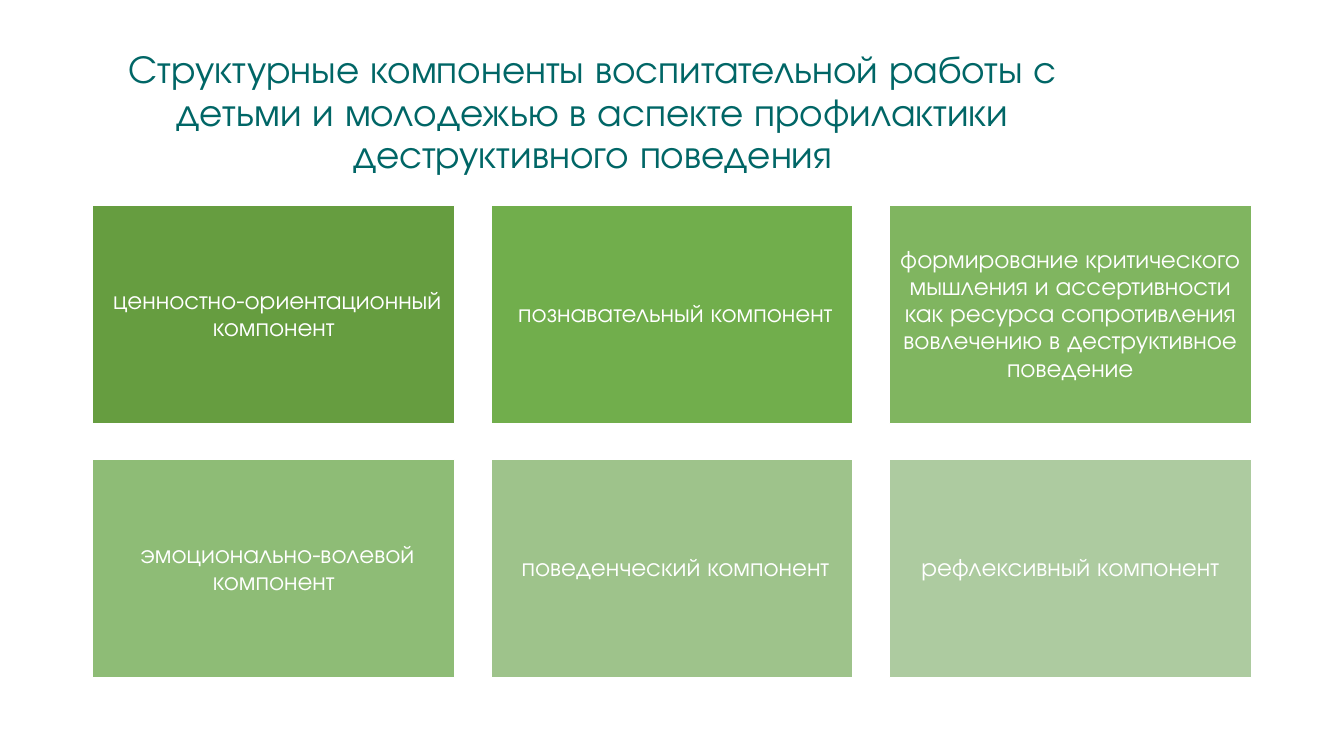
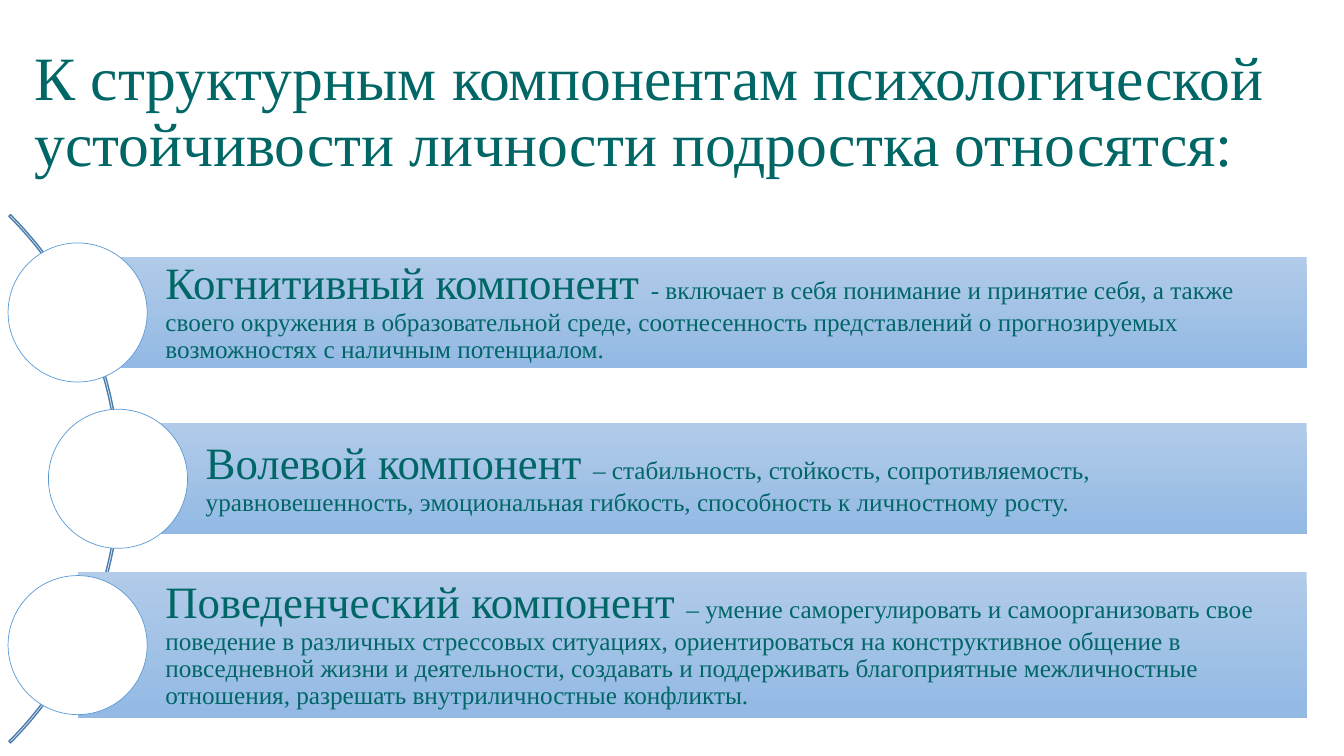
from pptx import Presentation
from pptx.dml.color import RGBColor
from pptx.enum.shapes import MSO_SHAPE
from pptx.enum.text import MSO_ANCHOR, MSO_AUTO_SIZE, PP_ALIGN
from pptx.util import Inches, Pt

TEAL, WHITE, BLUE, ARC_BLUE = "006666", "FFFFFF", "5B9BD5", "497CAB"
BAR_TOP, BAR_BOTTOM = "B1CBE9", "93B9E4"
SANS, SERIF = "TeX Gyre Adventor", "Times New Roman"

# (text, fill), row by row
CARDS = [
    (" ценностно-ориентационный компонент", "669D40"),
    (" познавательный компонент", "71AE4C"),
    ("формирование критического мышления и ассертивности как ресурса "
     "сопротивления вовлечению в деструктивное поведение", "80B560"),
    (" эмоционально-волевой компонент", "8EBC76"),
    (" поведенческий компонент", "9EC38B"),
    ("рефлексивный компонент", "ADCBA0"),
]

# (heading, explanation, indent from the left, bar height)
COMPONENTS = [
    ("Когнитивный компонент ",
     "- включает в себя понимание и принятие себя, а также своего окружения "
     "в образовательной среде, соотнесенность представлений о прогнозируемых "
     "возможностях с наличным потенциалом.", 0, 1.1),
    ("Волевой компонент ",
     "– стабильность, стойкость, сопротивляемость, уравновешенность, "
     "эмоциональная гибкость, способность к личностному росту.", 0.4, 1.1),
    ("Поведенческий компонент ",
     "– умение саморегулировать и самоорганизовать свое поведение в различных "
     "стрессовых ситуациях, ориентироваться на конструктивное общение в "
     "повседневной жизни и деятельности, создавать и поддерживать "
     "благоприятные межличностные отношения, разрешать внутриличностные "
     "конфликты.", 0, 1.44),
]


def rgb(color):
    return RGBColor.from_string(color)


def add_shape(s, kind, x, y, w, h, fill=None, line=None, line_width=1):
    sp = s.shapes.add_shape(kind, Inches(x), Inches(y), Inches(w), Inches(h))
    sp.shadow.inherit = False
    if fill:
        sp.fill.solid()
        sp.fill.fore_color.rgb = rgb(fill)
    else:
        sp.fill.background()
    if line:
        sp.line.color.rgb = rgb(line)
        sp.line.width = Pt(line_width)
    else:
        sp.line.fill.background()
    return sp


def format_text(tf, runs, font, color, align, insets):
    """Fill a frame with one paragraph of (text, size) runs."""
    tf.word_wrap = True
    tf.auto_size = MSO_AUTO_SIZE.NONE
    tf.vertical_anchor = MSO_ANCHOR.MIDDLE
    tf.margin_left, tf.margin_top, tf.margin_right, tf.margin_bottom = map(Inches, insets)
    p = tf.paragraphs[0]
    p.alignment = align
    p.line_spacing = 0.9
    p.font.name = font
    p.font.color.rgb = rgb(color)
    for text, size in runs:
        r = p.add_run()
        r.text = text
        r.font.size = Pt(size)


def add_titled_slide(prs, title, x, w, font, size, align):
    s = prs.slides.add_slide(prs.slide_layouts[5])
    sp = s.shapes.title
    sp.left, sp.top, sp.width, sp.height = map(Inches, (x, 0.4, w, 1.45))
    format_text(sp.text_frame, [(title, size)], font, TEAL, align, (0.1, 0.05, 0.1, 0.05))
    return s


def add_card_grid(s, x, y, w, h, cols=3, rows=2, gap=0.36):
    card_w = (w - gap * (cols - 1)) / cols
    card_h = (h - gap * (rows - 1)) / rows
    for i, (text, fill) in enumerate(CARDS):
        row, col = divmod(i, cols)
        sp = add_shape(s, MSO_SHAPE.RECTANGLE, x + col * (card_w + gap),
                       y + row * (card_h + gap), card_w, card_h, fill, WHITE)
        format_text(sp.text_frame, [(text, 18)], SANS, WHITE, PP_ALIGN.CENTER, (0.07,) * 4)


def add_component_list(s, x, y, w, h):
    # Thin arc behind the circles, centred on the middle of the list
    middle, arc_size, circle = y + h / 2, 7.41, 1.38
    arc = add_shape(s, MSO_SHAPE.BLOCK_ARC, x - 6.3, middle - arc_size / 2,
                    arc_size, arc_size, line=ARC_BLUE)
    for i, value in enumerate((189, 27, 0.003)):
        arc.adjustments[i] = value

    # Gradient bars, each with a circle centred on its left edge
    pitch = (h - circle) / (len(COMPONENTS) - 1)
    for i, (heading, explanation, indent, bar_h) in enumerate(COMPONENTS):
        left = x + circle / 2 + indent
        center = y + circle / 2 + i * pitch
        bar = add_shape(s, MSO_SHAPE.RECTANGLE, left, center - bar_h / 2,
                        x + w - left, bar_h)
        bar.fill.gradient()
        bar.fill.gradient_angle = 270
        for stop, color in zip(bar.fill.gradient_stops, (BAR_TOP, BAR_BOTTOM)):
            stop.color.rgb = rgb(color)
        format_text(bar.text_frame, [(heading, 32), (explanation, 18)], SERIF,
                    TEAL, PP_ALIGN.LEFT, (0.87, 0.09, 0.09, 0.09))
        add_shape(s, MSO_SHAPE.OVAL, left - circle / 2, center - circle / 2,
                  circle, circle, WHITE, BLUE, 0.5)


def main():
    prs = Presentation()
    prs.slide_width, prs.slide_height = Inches(13.33), Inches(7.5)

    s = add_titled_slide(
        prs, "Структурные компоненты воспитательной работы с детьми и молодежью "
        "в аспекте профилактики деструктивного поведения",
        0.92, 9.92, SANS, 28, PP_ALIGN.CENTER)
    add_card_grid(s, 0.92, 2.04, 11.49, 4.68)

    s = add_titled_slide(
        prs, "К структурным компонентам психологической устойчивости личности "
        "подростка относятся:", 0.24, 12.87, SERIF, 44, PP_ALIGN.LEFT)
    add_component_list(s, 0.08, 2.41, 12.88, 4.68)

    prs.save("out.pptx")


if __name__ == "__main__":
    main()
